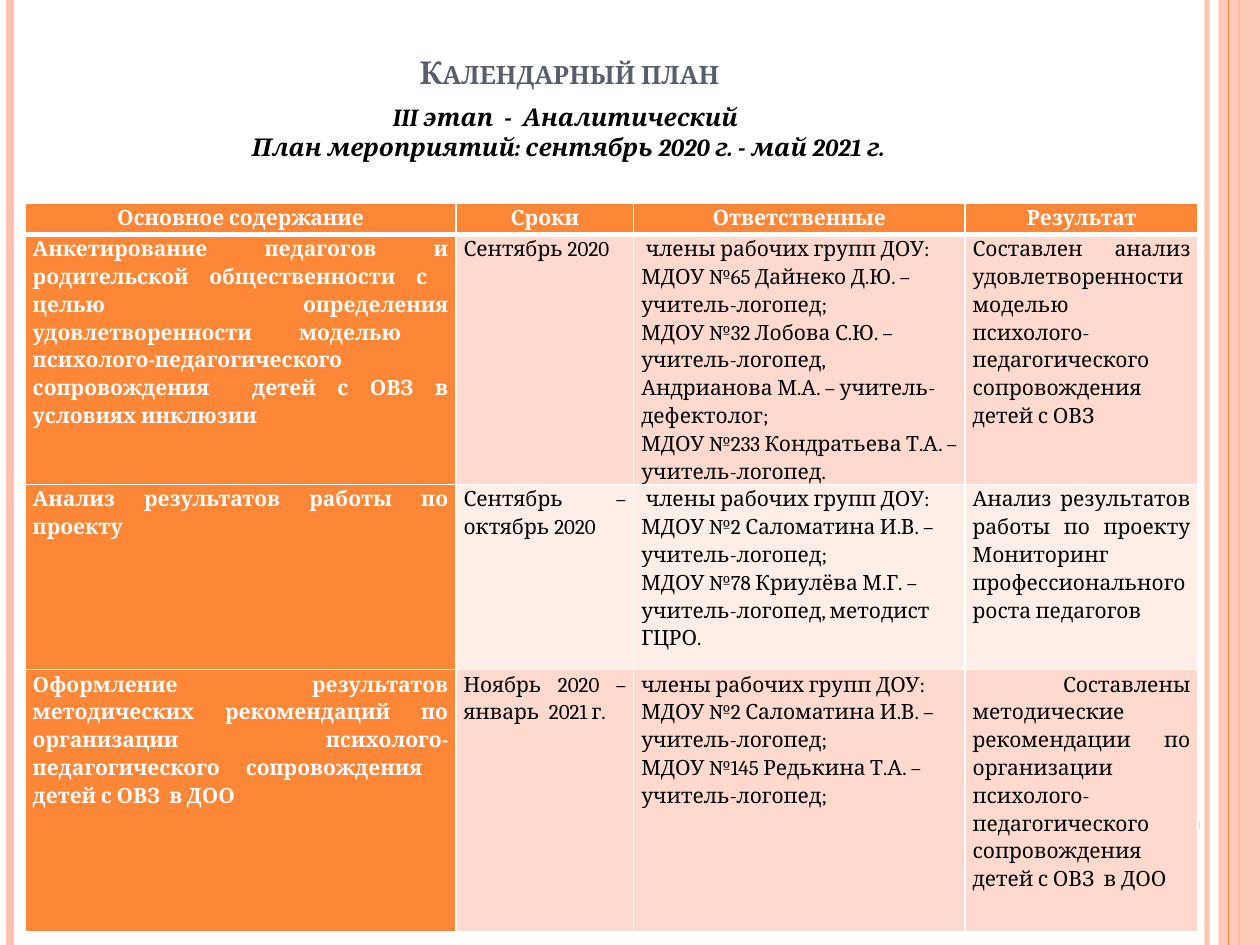
import pptx
import pptx.util
import pptx.dml.color
import pptx.enum.shapes
import pptx.enum.text
import pptx.oxml
import pptx.oxml.ns

theme = {
    "font": "Cambria",
    "head": 18, "sub": 14, "body": 12,
    "slate": "575F6D", "black": "000000", "white": "FFFFFF",
    "orange": "FE8637", "peach": "FEC3AE", "band": "FFD9CE", "pale": "FFEDE8",
}
pt = pptx.util.Pt
align = pptx.enum.text.PP_ALIGN
kind = pptx.enum.shapes.MSO_SHAPE
tag = pptx.oxml.ns.qn
space = pptx.oxml.ns.nsdecls("a")


def tint(fill, shade, alpha=100):
    fill.solid()
    fill.fore_color.rgb = pptx.dml.color.RGBColor.from_string(theme[shade])
    if alpha < 100:
        node = fill._xPr.find(tag("a:solidFill"))[0]
        node.append(pptx.oxml.parse_xml(f'<a:alpha {space} val="{alpha * 1000}"/>'))


def write(para, text, size, shade, bold=False, slant=False, side=align.CENTER):
    para.alignment = side
    run = para.add_run()
    run.text = text
    font = run.font
    font.name, font.size = theme["font"], pt(theme[size])
    font.bold, font.italic = bold, slant
    tint(font.fill, shade)
    return run


deck = pptx.Presentation()
deck.slide_width, deck.slide_height = pptx.util.Inches(10), pptx.util.Inches(7.5)
col, row = deck.slide_width // 100, deck.slide_height // 75
slide = deck.slides.add_slide(deck.slide_layouts[5])
shapes = slide.shapes

rails = []
for x, shade, width, alpha in [(95.8, "peach", 3, 93), (0.8, "peach", 4.5, 100),
                               (98.35, "orange", 1.5, 100), (97.5, "orange", 0.75, 100)]:
    x = int(x * col)
    rail = shapes.add_connector(pptx.enum.shapes.MSO_CONNECTOR.STRAIGHT, x, 0, x, 75 * row)
    rail.line.width = pt(width)
    tint(rail.line.fill, shade, alpha)
    rail._element.spPr.append(pptx.oxml.parse_xml(f'<a:effectLst {space}/>'))
    rails.append(rail)

forms = []
for form, x, y, wide, high, shade, alpha in [
        (kind.RECTANGLE, 96.7, 0, 3.3, 75, "peach", 87),
        (kind.OVAL, 89.2, 62.5, 6, 6, "orange", 100)]:
    shape = shapes.add_shape(form, int(x * col), int(y * row), int(wide * col), int(high * row))
    shape.shadow.inherit = False
    shape.line.fill.background()
    tint(shape.fill, shade, alpha)
    forms.append(shape)
rails[2].begin_connect(forms[0], 0)
rails[2].end_connect(forms[0], 2)
forms[0]._element.addnext(rails[3]._element)

title = shapes.title
title.left, title.top, title.width, title.height = 5 * col, 3 * row, int(80.4 * col), int(5.4 * row)
title.text_frame.vertical_anchor = pptx.enum.text.MSO_ANCHOR.MIDDLE
run = write(title.text_frame.paragraphs[0], "Календарный план", "head", "slate", True)
run.font._element.set("cap", "small")

head = ["Основное содержание", "Сроки", "Ответственные", "Результат"]
plan = [
    ["Анкетирование педагогов и родительской общественности с  целью определения "
     "удовлетворенности моделью  психолого-педагогического сопровождения  детей с ОВЗ "
     "в условиях инклюзии",
     "Сентябрь 2020",
     " члены рабочих групп ДОУ:\n"
     "МДОУ №65 Дайнеко Д.Ю. – учитель-логопед;\n"
     "МДОУ №32 Лобова С.Ю. – учитель-логопед, Андрианова М.А. – учитель-дефектолог;\n"
     "МДОУ №233 Кондратьева Т.А. – учитель-логопед.",
     "Составлен анализ удовлетворенности  моделью  психолого-педагогического "
     "сопровождения  детей с ОВЗ"],
    ["Анализ результатов работы по проекту",
     "Сентябрь – октябрь 2020",
     " члены рабочих групп ДОУ:\n"
     "МДОУ №2 Саломатина И.В. – учитель-логопед;\n"
     "МДОУ №78 Криулёва М.Г. – учитель-логопед, методист ГЦРО.",
     "Анализ результатов работы по проекту Мониторинг профессионального роста педагогов"],
    ["Оформление результатов методических рекомендаций по организации "
     "психолого-педагогического сопровождения  детей с ОВЗ  в ДОО",
     "Ноябрь 2020 – январь  2021 г.",
     "члены рабочих групп ДОУ:\n"
     "МДОУ №2 Саломатина И.В. – учитель-логопед;\n"
     "МДОУ №145 Редькина Т.А. – учитель-логопед;",
     " Составлены методические рекомендации по организации психолого-педагогического "
     "сопровождения  детей с ОВЗ  в ДОО"],
]
grid = shapes.add_table(4, 4, 2 * col, int(16.1 * row), 93 * col, int(57.6 * row)).table
for part, wide in zip(grid.columns, [34.2, 14.1, 26.3, 18.5]):
    part.width = int(wide * col)
for part, high in zip(grid.rows, [2.5, 19.6, 14.7, 20.8]):
    part.height = int(high * row)

for r, texts in enumerate([head] + plan):
    for c, text in enumerate(texts):
        cell = grid.cell(r, c)
        cell.margin_left = cell.margin_right = int(0.6 * col)
        cell.margin_top = cell.margin_bottom = 0
        key = r == 0 or c == 0
        side = align.CENTER if r == 0 else align.LEFT if c == 2 else align.JUSTIFY
        frame = cell.text_frame
        for i, line in enumerate(text.split("\n")):
            para = frame.add_paragraph() if i else frame.paragraphs[0]
            para.line_spacing = 1.15
            para.space_after = pt(0 if r else 10)
            write(para, line, "body", "white" if key else "black", key, side=side)
        tint(cell.fill, "orange" if key else "band" if r % 2 else "pale")
        props = cell._tc.get_or_add_tcPr()
        for i, edge in enumerate("LRTB"):
            thick = 3 if (r, edge) in [(0, "B"), (1, "T")] else 1
            props.insert(i, pptx.oxml.parse_xml(
                f'<a:ln{edge} {space} w="{pt(thick)}"><a:solidFill>'
                f'<a:srgbClr val="{theme["white"]}"/></a:solidFill></a:ln{edge}>'))

box = shapes.add_textbox(int(17.7 * col), int(7.6 * row), int(54.8 * col), int(5.7 * row))
frame = box.text_frame
frame.word_wrap = False
frame.auto_size = pptx.enum.text.MSO_AUTO_SIZE.SHAPE_TO_FIT_TEXT
frame.vertical_anchor = pptx.enum.text.MSO_ANCHOR.MIDDLE
write(frame.paragraphs[0], "III этап  -  Аналитический ", "sub", "black", True, True)
write(frame.add_paragraph(), "План мероприятий: сентябрь 2020 г. - май 2021 г.",
      "sub", "black", True, True)

deck.save("out.pptx")
